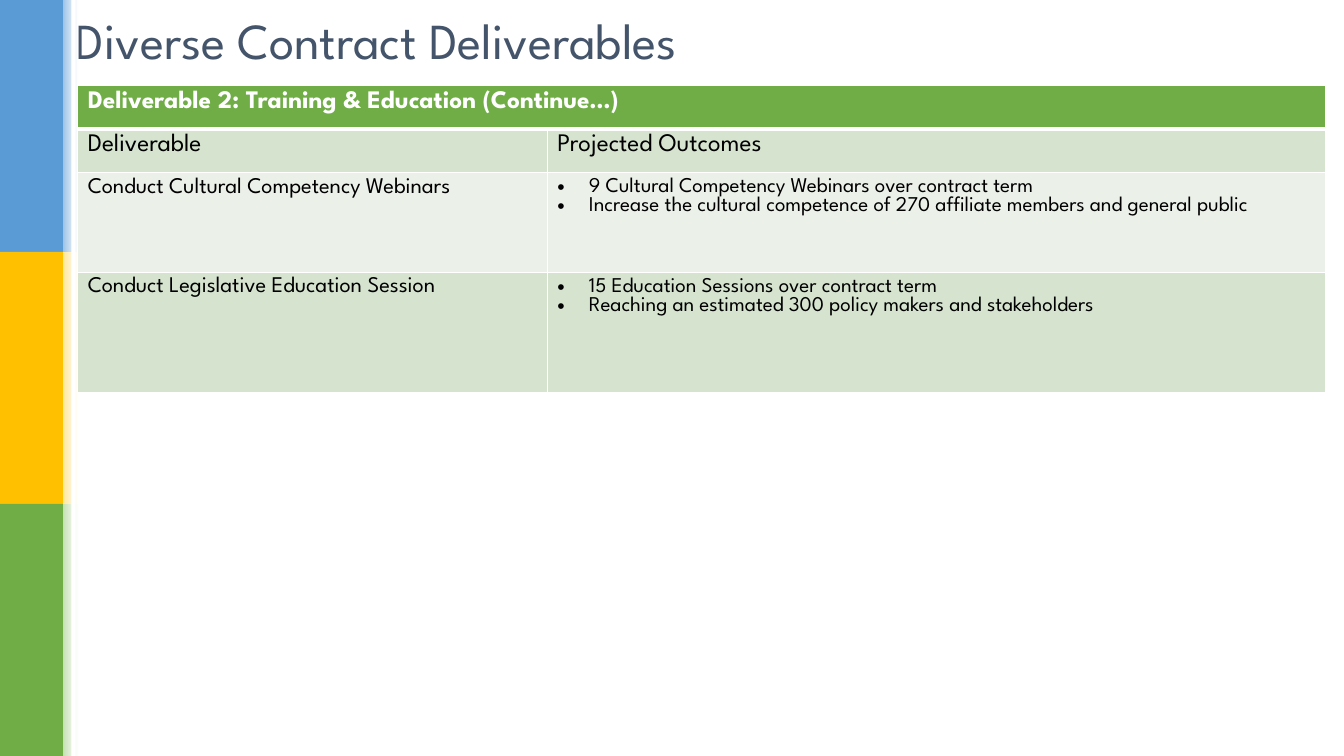
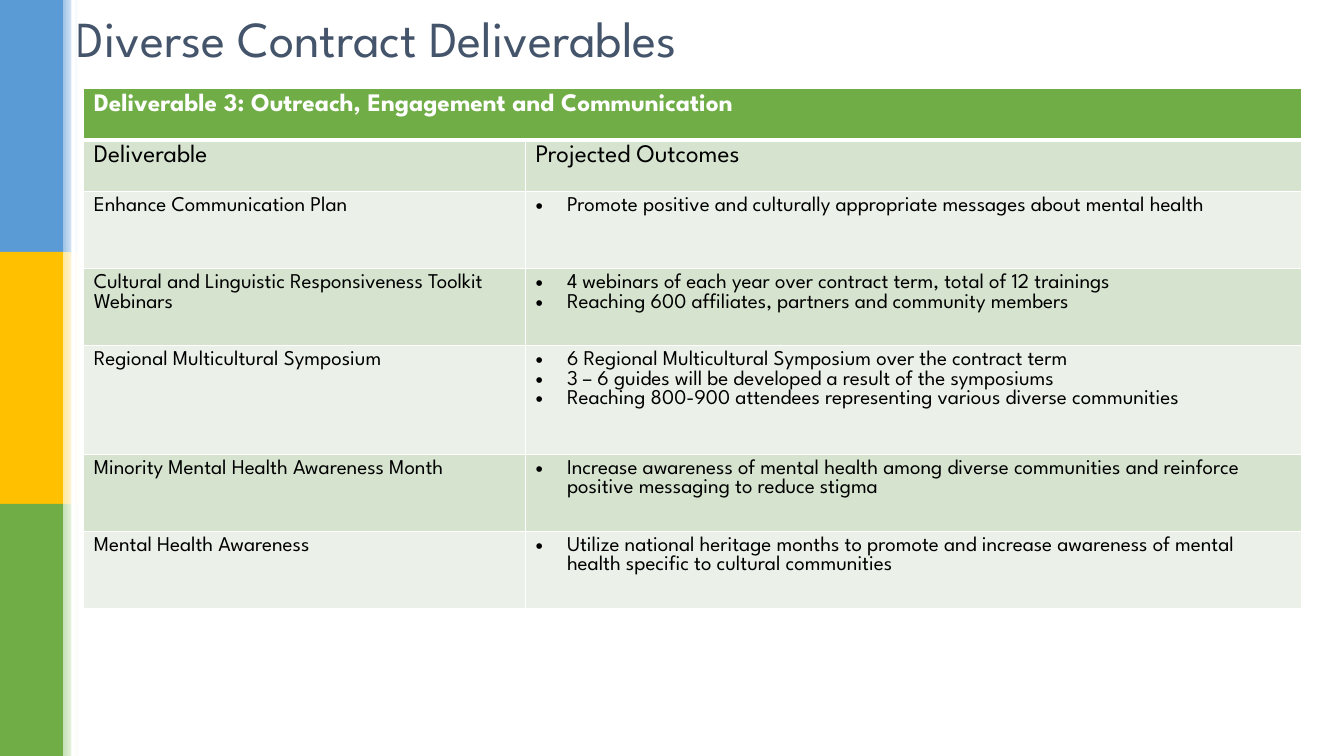
from lxml import etree
from pptx import Presentation
from pptx.dml.color import RGBColor
from pptx.enum.shapes import MSO_SHAPE
from pptx.enum.text import MSO_ANCHOR, MSO_AUTO_SIZE, PP_ALIGN
from pptx.oxml.ns import qn
from pptx.util import Pt

RECTANGLE = MSO_SHAPE.RECTANGLE
MIDDLE = MSO_ANCHOR.MIDDLE
LEFT = PP_ALIGN.LEFT
NO_AUTOFIT = MSO_AUTO_SIZE.NONE
TITLE_ONLY = 5

PAGE_WIDTH, PAGE_HEIGHT = 960, 540
BAR_WIDTH, FADE_WIDTH = 45, 11
STRIPE_LEFT, STRIPE_WIDTH = 51, 3
BULLET_INDENT = 22.5


def color(hex_string):
    return RGBColor.from_string(hex_string)


class DeliverablesDeck:
    FONT = "League Spartan"
    WHITE, BLACK, SLATE, GREEN = "FFFFFF", "000000", "44546A", "70AD47"
    BANDS = ("D5E3CF", "EBF1E9")
    SIDEBAR = (("5B9BD5", "9DC3E6"), ("FFC000", "FFE699"), (GREEN, "C5E0B4"))
    HEADING_SIZE, OUTCOME_SIZE = 18, 15

    def __init__(self):
        self.deck = Presentation()
        self.deck.slide_width = Pt(PAGE_WIDTH)
        self.deck.slide_height = Pt(PAGE_HEIGHT)
        self.page = None

    def add_page(self, title, title_top):
        layout = self.deck.slide_layouts[TITLE_ONLY]
        self.page = self.deck.slides.add_slide(layout)
        self.add_sidebar()
        self.set_title(title, title_top)

    def add_rectangle(self, left, top, width, height, fill, fade_to=None):
        """Draw a borderless rectangle, fading left to right if fade_to is given."""
        box = self.page.shapes.add_shape(
            RECTANGLE, Pt(left), Pt(top), Pt(width), Pt(height))
        box.shadow.inherit = False
        box.line.fill.background()
        if fade_to:
            box.fill.gradient()
            box.fill.gradient_angle = 0
            for stop, shade in zip(box.fill.gradient_stops, (fill, fade_to)):
                stop.color.rgb = color(shade)
        else:
            box.fill.solid()
            box.fill.fore_color.rgb = color(fill)

    def add_sidebar(self):
        height = PAGE_HEIGHT / len(self.SIDEBAR)
        for index, (solid, pale) in enumerate(self.SIDEBAR):
            top = index * height
            self.add_rectangle(0, top, BAR_WIDTH, height, solid)
            self.add_rectangle(BAR_WIDTH, top, FADE_WIDTH, height, pale, self.WHITE)
        self.add_rectangle(STRIPE_LEFT, 0, STRIPE_WIDTH, PAGE_HEIGHT, self.WHITE)

    def set_title(self, text, top):
        title = self.page.shapes.title
        title.left, title.top = Pt(46.8), Pt(top)
        title.width, title.height = Pt(828), Pt(82)
        frame = title.text_frame
        frame.text = text
        frame.auto_size = NO_AUTOFIT
        frame.vertical_anchor = MIDDLE
        para = frame.paragraphs[0]
        para.alignment = LEFT
        para.line_spacing = 0.9
        self.set_font(para, 36, self.SLATE)

    def set_font(self, para, size, shade, bold=False):
        para.font.name = self.FONT
        para.font.size = Pt(size)
        para.font.bold = bold
        para.font.color.rgb = color(shade)

    def add_bullet(self, para):
        properties = para._p.get_or_add_pPr()
        properties.set("marL", str(Pt(BULLET_INDENT)))
        properties.set("indent", str(-Pt(BULLET_INDENT)))
        etree.SubElement(properties, qn("a:buFont"), typeface="Arial")
        etree.SubElement(properties, qn("a:buChar"), char="•")

    def add_borders(self, cell, top, bottom):
        """Give a cell white borders; top and bottom are widths."""
        properties = cell._tc.get_or_add_tcPr()
        for side, width in (("L", 1), ("R", 1), ("T", top), ("B", bottom)):
            line = etree.SubElement(properties, qn(f"a:ln{side}"), w=str(Pt(width)))
            fill = etree.SubElement(line, qn("a:solidFill"))
            etree.SubElement(fill, qn("a:srgbClr"), val=self.WHITE)

    def fill_cell(self, cell, lines, size, shade=BLACK, bold=False, bullets=False):
        cell.text = "\n".join(lines)
        for para in cell.text_frame.paragraphs:
            if bullets:
                self.add_bullet(para)
            self.set_font(para, size, shade, bold)

    def add_table(self, left, top, widths, heights, heading, label_size, deliverables):
        """Add a heading row, a column-name row and a row per deliverable."""
        table = self.page.shapes.add_table(
            len(heights), len(widths), Pt(left), Pt(top),
            Pt(sum(widths)), Pt(sum(heights))).table
        table.horz_banding = False
        for column, width in zip(table.columns, widths):
            column.width = Pt(width)
        for index, (row, height) in enumerate(zip(table.rows, heights)):
            row.height = Pt(height)
            fill = self.BANDS[(index - 1) % 2] if index else self.GREEN
            for cell in row.cells:
                self.add_borders(cell, top=3 if index == 1 else 1,
                                 bottom=1 if index else 3)
                cell.fill.solid()
                cell.fill.fore_color.rgb = color(fill)

        table.cell(0, 0).merge(table.cell(0, 1))
        self.fill_cell(table.cell(0, 0), [heading], self.HEADING_SIZE,
                       self.WHITE, bold=True)
        for index, name in enumerate(("Deliverable", "Projected Outcomes")):
            self.fill_cell(table.cell(1, index), [name], self.HEADING_SIZE)
        for index, (label, outcomes) in enumerate(deliverables, start=2):
            self.fill_cell(table.cell(index, 0), [label], label_size)
            self.fill_cell(table.cell(index, 1), outcomes, self.OUTCOME_SIZE,
                           bullets=True)


TITLE = "Diverse Contract Deliverables"

TRAINING = (
    ("Conduct Cultural Competency Webinars", (
        "9 Cultural Competency Webinars over contract term",
        "Increase the cultural competence of 270 affiliate members and general public",
    )),
    ("Conduct Legislative Education Session", (
        "15 Education Sessions over contract term",
        "Reaching an estimated 300 policy makers and stakeholders",
    )),
)

OUTREACH = (
    ("Enhance Communication Plan", (
        "Promote positive and culturally appropriate messages about mental health",
    )),
    ("Cultural and Linguistic Responsiveness Toolkit Webinars", (
        "4 webinars of each year over contract term, total of 12 trainings",
        "Reaching 600 affiliates, partners and community members",
    )),
    ("Regional Multicultural Symposium", (
        "6 Regional Multicultural Symposium over the contract term",
        "3 – 6 guides will be developed a result of the symposiums",
        "Reaching 800-900 attendees representing various diverse communities",
    )),
    ("Minority Mental Health Awareness Month", (
        "Increase awareness of mental health among diverse communities and "
        "reinforce positive messaging to reduce stigma",
    )),
    ("Mental Health Awareness", (
        "Utilize national heritage months to promote and increase awareness of "
        "mental health specific to cultural communities",
    )),
)


def main():
    builder = DeliverablesDeck()
    builder.add_page(TITLE, title_top=-10)
    builder.add_table(
        55.5, 61.2, widths=(335.5, 556), heights=(31, 31, 71.3, 85.7),
        heading="Deliverable 2: Training & Education (Continue…)",
        label_size=16, deliverables=TRAINING)
    builder.add_page(TITLE, title_top=-11.7)
    builder.add_table(
        59.8, 63.4, widths=(315.5, 554.5),
        heights=(36.8, 36.8, 55, 55, 77.6, 55, 55),
        heading="Deliverable 3: Outreach, Engagement and Communication",
        label_size=15, deliverables=OUTREACH)
    builder.deck.save("out.pptx")


if __name__ == "__main__":
    main()
